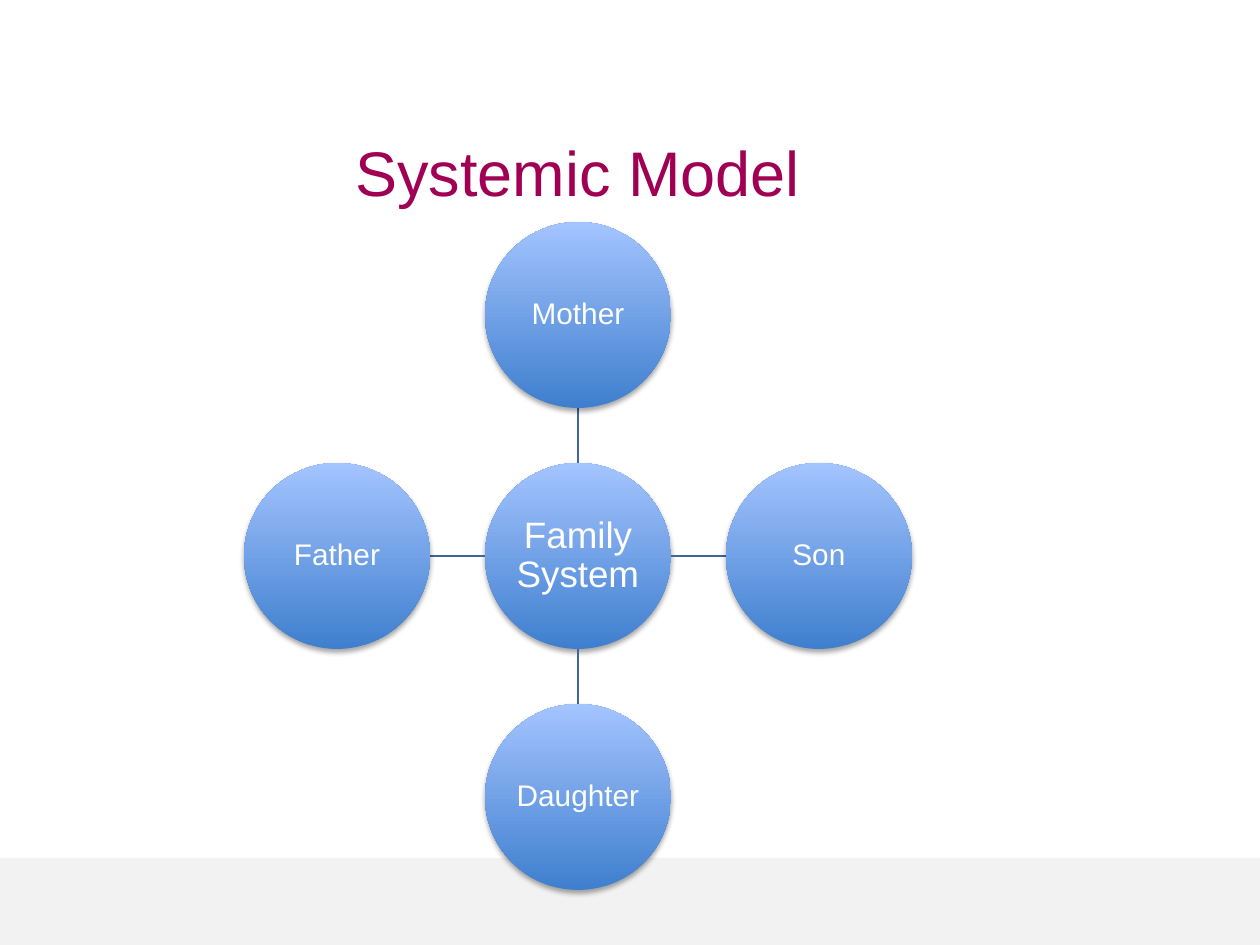
import pptx
import pptx.dml.color
import pptx.enum.shapes
import pptx.enum.text
import pptx.util
from dataclasses import dataclass
from lxml import etree
from pptx.oxml.ns import qn

EMU_PER_PX = 914400 // 126


def px(length):
    return pptx.util.Emu(length * EMU_PER_PX)


def rgb(value):
    return pptx.dml.color.RGBColor.from_string(value)


@dataclass(frozen=True)
class Theme:
    font: str = "Arial"
    title_color: str = "A00054"
    band: str = "F2F2F2"
    circle_bottom: str = "3F7FCE"
    circle_top: str = "A4C4FF"
    circle_text: str = "FFFFFF"
    spoke: str = "3F6797"
    shadow: str = "000000"
    title_size: int = 36
    hub_size: int = 21
    member_size: int = 17


class SlideBuilder:
    def __init__(self, slide, theme):
        self.shapes = slide.shapes
        self.theme = theme

    def set_text(self, shape, text, size, color, inset, line_spacing=1.0):
        frame = shape.text_frame
        frame.word_wrap = True
        frame.vertical_anchor = pptx.enum.text.MSO_ANCHOR.MIDDLE
        frame.margin_left = frame.margin_right = px(inset)
        frame.margin_top = frame.margin_bottom = px(inset)
        paragraph = frame.paragraphs[0]
        paragraph.text = text
        paragraph.alignment = pptx.enum.text.PP_ALIGN.CENTER
        paragraph.line_spacing = line_spacing
        paragraph.font.name = self.theme.font
        paragraph.font.size = pptx.util.Pt(size)
        paragraph.font.color.rgb = rgb(color)

    def band(self, left, top, width, height):
        band = self.shapes.add_shape(
            pptx.enum.shapes.MSO_SHAPE.RECTANGLE,
            px(left), px(top), px(width), px(height))
        band.shadow.inherit = False
        band.fill.solid()
        band.fill.fore_color.rgb = rgb(self.theme.band)
        band.line.fill.background()

    def title(self, text, left, top, width, height):
        title = self.shapes.add_textbox(px(left), px(top), px(width), px(height))
        self.set_text(title, text, self.theme.title_size, self.theme.title_color, 6)

    def circle(self, text, center_x, center_y, radius, size):
        circle = self.shapes.add_shape(
            pptx.enum.shapes.MSO_SHAPE.OVAL,
            px(center_x - radius), px(center_y - radius),
            px(2 * radius), px(2 * radius))
        circle.line.fill.background()
        circle.fill.gradient()
        circle.fill.gradient_angle = 90
        colors = (self.theme.circle_bottom, self.theme.circle_top)
        for stop, color, position in zip(circle.fill.gradient_stops, colors, (0, 1)):
            stop.color.rgb = rgb(color)
            stop.position = position
        self.drop_shadow(circle)
        self.set_text(circle, text, size, self.theme.circle_text, 1, 0.9)

    def drop_shadow(self, shape):
        shape.shadow.inherit = False
        effects = shape._element.spPr.find(qn("a:effectLst"))
        outer = etree.SubElement(
            effects, qn("a:outerShdw"), blurRad=str(pptx.util.Pt(3.1)),
            dist=str(pptx.util.Pt(1.8)), dir="5400000", rotWithShape="0")
        color = etree.SubElement(outer, qn("a:srgbClr"), val=self.theme.shadow)
        etree.SubElement(color, qn("a:alpha"), val="35000")

    def spoke(self, x1, y1, x2, y2):
        spoke = self.shapes.add_connector(
            pptx.enum.shapes.MSO_CONNECTOR.STRAIGHT, px(x1), px(y1), px(x2), px(y2))
        spoke.line.color.rgb = rgb(self.theme.spoke)
        spoke.line.width = pptx.util.Pt(0.75)
        etree.SubElement(spoke._element.spPr, qn("a:effectLst"))


def main():
    presentation = pptx.Presentation()
    presentation.slide_width = px(1260)
    presentation.slide_height = px(945)
    theme = Theme()
    builder = SlideBuilder(
        presentation.slides.add_slide(presentation.slide_layouts[6]), theme)

    # Footer band and title
    builder.band(0, 858, 1260, 87)
    builder.title("Systemic Model", 63, 123, 1029, 97)

    # Hub of the family diagram
    hub_x, hub_y, radius, reach = 578, 556, 93, 241
    builder.circle("Family System", hub_x, hub_y, radius, theme.hub_size)

    # Members around the hub, each with its spoke
    members = (("Mother", 0, -1), ("Son", 1, 0), ("Daughter", 0, 1), ("Father", -1, 0))
    for name, dx, dy in members:
        near, far = radius, reach - radius
        builder.spoke(hub_x + dx * near, hub_y + dy * near,
                      hub_x + dx * far, hub_y + dy * far)
        builder.circle(name, hub_x + dx * reach, hub_y + dy * reach,
                       radius, theme.member_size)

    presentation.save("out.pptx")


if __name__ == "__main__":
    main()
